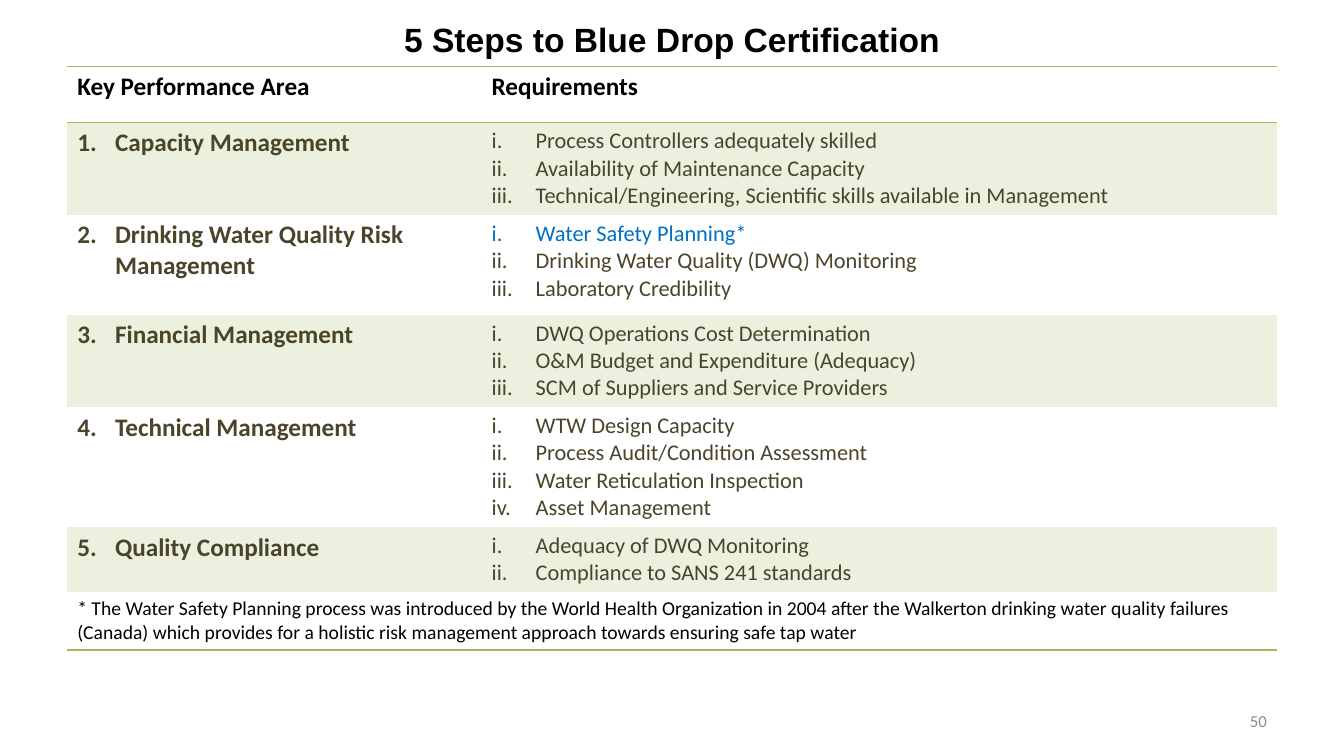
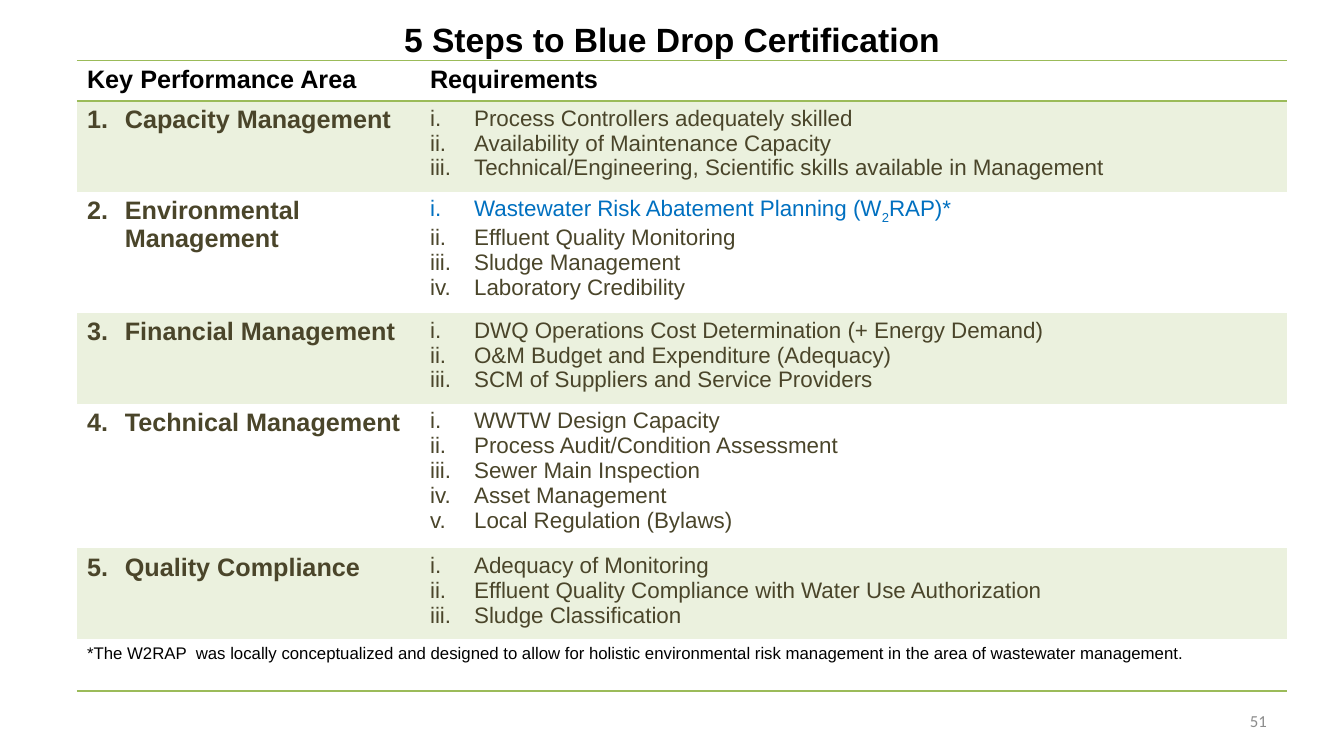
"""Builds two certification slides, each a table of performance areas and requirements."""
from dataclasses import dataclass
from typing import Any

from lxml.etree import SubElement
from pptx import Presentation
from pptx.dml.color import RGBColor
from pptx.enum.text import MSO_ANCHOR, PP_ALIGN
from pptx.oxml import parse_xml
from pptx.oxml.ns import nsdecls, qn
from pptx.util import Pt


@dataclass(frozen=True)
class Theme:
    black: str = "000000"
    body: str = "4A452A"
    highlight: str = "0070C0"
    band: str = "EBF1DE"
    rule: str = "9BBB59"
    muted: str = "8C8C8C"
    title_font: str = "Arial"
    number_font: str = "Calibri"
    title_size: float = 24
    area_size: float = 18
    requirement_size: float = 16
    number_size: float = 12
    area_indent: float = 27
    requirement_indent: float = 31.5
    plain_table: str = "{2D5ABB26-0587-4C30-8999-92F81FD0307C}"


@dataclass(frozen=True)
class Area:
    name: str
    requirements: tuple[str, ...]


@dataclass(frozen=True)
class StepsSlide:
    number: int
    font: str
    left: float
    top: float
    columns: tuple[float, ...]
    rows: tuple[float, ...]
    areas: tuple[Area, ...]
    footnote: str
    footnote_size: float


THEME = Theme()
TITLE = "5 Steps to Blue Drop Certification"
HEADINGS = ("Key Performance Area", "Requirements")
CAPACITY = Area("Capacity Management", (
    "Process Controllers adequately skilled",
    "Availability of Maintenance Capacity",
    "Technical/Engineering, Scientific skills available in Management",
))
SLIDES = (
    StepsSlide(
        50, "Calibri", 48, 47.5, (296, 568), (40, 66, 71.4, 66, 85.7, 46.3, 41.4),
        (
            CAPACITY,
            Area("Drinking Water Quality Risk Management", (
                "Water Safety Planning*",
                "Drinking Water Quality (DWQ) Monitoring",
                "Laboratory Credibility",
            )),
            Area("Financial Management", (
                "DWQ Operations Cost Determination",
                "O&M Budget and Expenditure (Adequacy)",
                "SCM of Suppliers and Service Providers",
            )),
            Area("Technical Management", (
                "WTW Design Capacity",
                "Process Audit/Condition Assessment",
                "Water Reticulation Inspection",
                "Asset Management",
            )),
            Area("Quality Compliance", (
                "Adequacy of DWQ Monitoring",
                "Compliance to SANS 241 standards",
            )),
        ),
        "* The Water Safety Planning process was introduced by the World Health Organization "
        "in 2004 after the Walkerton drinking water quality failures (Canada) which provides "
        "for a holistic risk management approach towards ensuring safe tap water",
        14,
    ),
    StepsSlide(
        51, "Arial", 55, 43.3, (245, 619), (28, 62.6, 81.4, 62.6, 100, 62.6, 37.2),
        (
            CAPACITY,
            Area("Environmental Management", (
                "Wastewater Risk Abatement Planning (W~2~RAP)*",
                "Effluent Quality Monitoring",
                "Sludge Management",
                "Laboratory Credibility",
            )),
            Area("Financial Management", (
                "DWQ Operations Cost Determination (+ Energy Demand)",
                "O&M Budget and Expenditure (Adequacy)",
                "SCM of Suppliers and Service Providers",
            )),
            Area("Technical Management", (
                "WWTW Design Capacity",
                "Process Audit/Condition Assessment",
                "Sewer Main Inspection",
                "Asset Management",
                "Local Regulation (Bylaws)",
            )),
            Area("Quality Compliance", (
                "Adequacy of Monitoring",
                "Effluent Quality Compliance with Water Use Authorization",
                "Sludge Classification",
            )),
        ),
        "*The W2RAP  was locally conceptualized and designed to allow for holistic "
        "environmental risk management in the area of wastewater management.",
        12,
    ),
)


def apply_format(target: Any, values: dict[str, Any]) -> None:
    """Set each named attribute of the target."""
    for name, value in values.items():
        setattr(target, name, value)


def write(paragraph: Any, text: str, font: str, size: float, color: str, bold: bool = False) -> None:
    """Add text to a paragraph; parts between tildes become subscript."""
    for index, part in enumerate(text.split("~")):
        run = paragraph.add_run()
        run.text = part
        apply_format(run.font, {"name": font, "size": Pt(size), "bold": bold})
        run.font.color.rgb = RGBColor.from_string(color)
        if index % 2:
            run.font._element.set("baseline", "-25000")


def number_paragraph(paragraph: Any, style: str, indent: float, start: int = 1) -> None:
    """Give a paragraph an automatic number and a hanging indent."""
    properties = paragraph._p.get_or_add_pPr()
    properties.set("marL", str(Pt(indent)))
    properties.set("indent", str(-Pt(indent)))
    numbering = SubElement(properties, qn("a:buAutoNum"), type=style)
    if start > 1:
        numbering.set("startAt", str(start))


def add_rules(cell: Any, sides: str) -> None:
    """Draw a rule on each given side of a cell, T for top and B for bottom."""
    properties = cell._tc.get_or_add_tcPr()
    for index, side in enumerate(sides):
        properties.insert(index, parse_xml(
            f'<a:ln{side} {nsdecls("a")} w="{Pt(1)}"><a:solidFill>'
            f'<a:srgbClr val="{THEME.rule}"/></a:solidFill></a:ln{side}>'))


def fill_area_row(table: Any, row: int, area: Area, font: str) -> None:
    """Write one numbered area and its requirements, banding odd rows."""
    area_cell, requirement_cell = table.cell(row, 0), table.cell(row, 1)
    paragraph = area_cell.text_frame.paragraphs[0]
    number_paragraph(paragraph, "arabicPeriod", THEME.area_indent, row)
    write(paragraph, area.name, font, THEME.area_size, THEME.body, True)
    frame = requirement_cell.text_frame
    for index, requirement in enumerate(area.requirements):
        paragraph = frame.add_paragraph() if index else frame.paragraphs[0]
        number_paragraph(paragraph, "romanLcPeriod", THEME.requirement_indent)
        color = THEME.highlight if requirement.endswith("*") else THEME.body
        write(paragraph, requirement, font, THEME.requirement_size, color)
    if row % 2:
        for cell in (area_cell, requirement_cell):
            cell.fill.solid()
            cell.fill.fore_color.rgb = RGBColor.from_string(THEME.band)


def add_steps_table(slide: Any, content: StepsSlide) -> None:
    """Add the table of headings, areas and footnote."""
    table = slide.shapes.add_table(
        len(content.rows), len(content.columns), Pt(content.left), Pt(content.top),
        Pt(sum(content.columns)), Pt(sum(content.rows))).table
    table._tbl.tblPr.find(qn("a:tableStyleId")).text = THEME.plain_table
    apply_format(table, {"first_row": False, "horz_banding": False})
    for column, width in zip(table.columns, content.columns):
        column.width = Pt(width)
    for row, height in zip(table.rows, content.rows):
        row.height = Pt(height)
    for cell in table.iter_cells():
        cell.fill.background()
    for index, heading in enumerate(HEADINGS):
        cell = table.cell(0, index)
        write(cell.text_frame.paragraphs[0], heading, content.font,
              THEME.area_size, THEME.black, True)
        add_rules(cell, "TB")
    for row, area in enumerate(content.areas, start=1):
        fill_area_row(table, row, area, content.font)
    last_row = len(content.rows) - 1
    footnote_cell = table.cell(last_row, 0)
    footnote_cell.merge(table.cell(last_row, 1))
    write(footnote_cell.text_frame.paragraphs[0], content.footnote, content.font,
          content.footnote_size, THEME.black)
    for index in range(len(content.columns)):
        add_rules(table.cell(last_row, index), "B")


def place_line(shape: Any, box: tuple[float, ...], alignment: PP_ALIGN) -> Any:
    """Place a text shape and return its aligned first paragraph."""
    apply_format(shape, dict(zip(("left", "top", "width", "height"), map(Pt, box))))
    apply_format(shape.text_frame, {"word_wrap": True, "vertical_anchor": MSO_ANCHOR.MIDDLE})
    paragraph = shape.text_frame.paragraphs[0]
    paragraph.alignment = alignment
    return paragraph


def add_steps_slide(presentation: Any, content: StepsSlide) -> None:
    """Add one slide with title, page number and table."""
    slide = presentation.slides.add_slide(presentation.slide_layouts[5])
    title = place_line(slide.shapes.title, (48, -2, 864, 60), PP_ALIGN.CENTER)
    write(title, TITLE, THEME.title_font, THEME.title_size, THEME.black, True)
    number_box = slide.shapes.add_textbox(0, 0, 0, 0)
    number = place_line(number_box, (688, 500.5, 224, 28.8), PP_ALIGN.RIGHT)
    write(number, str(content.number), THEME.number_font, THEME.number_size, THEME.muted)
    add_steps_table(slide, content)


def main() -> None:
    """Build and save the presentation."""
    presentation = Presentation()
    apply_format(presentation, {"slide_width": Pt(960), "slide_height": Pt(540)})
    for content in SLIDES:
        add_steps_slide(presentation, content)
    presentation.save("out.pptx")


if __name__ == "__main__":
    main()
